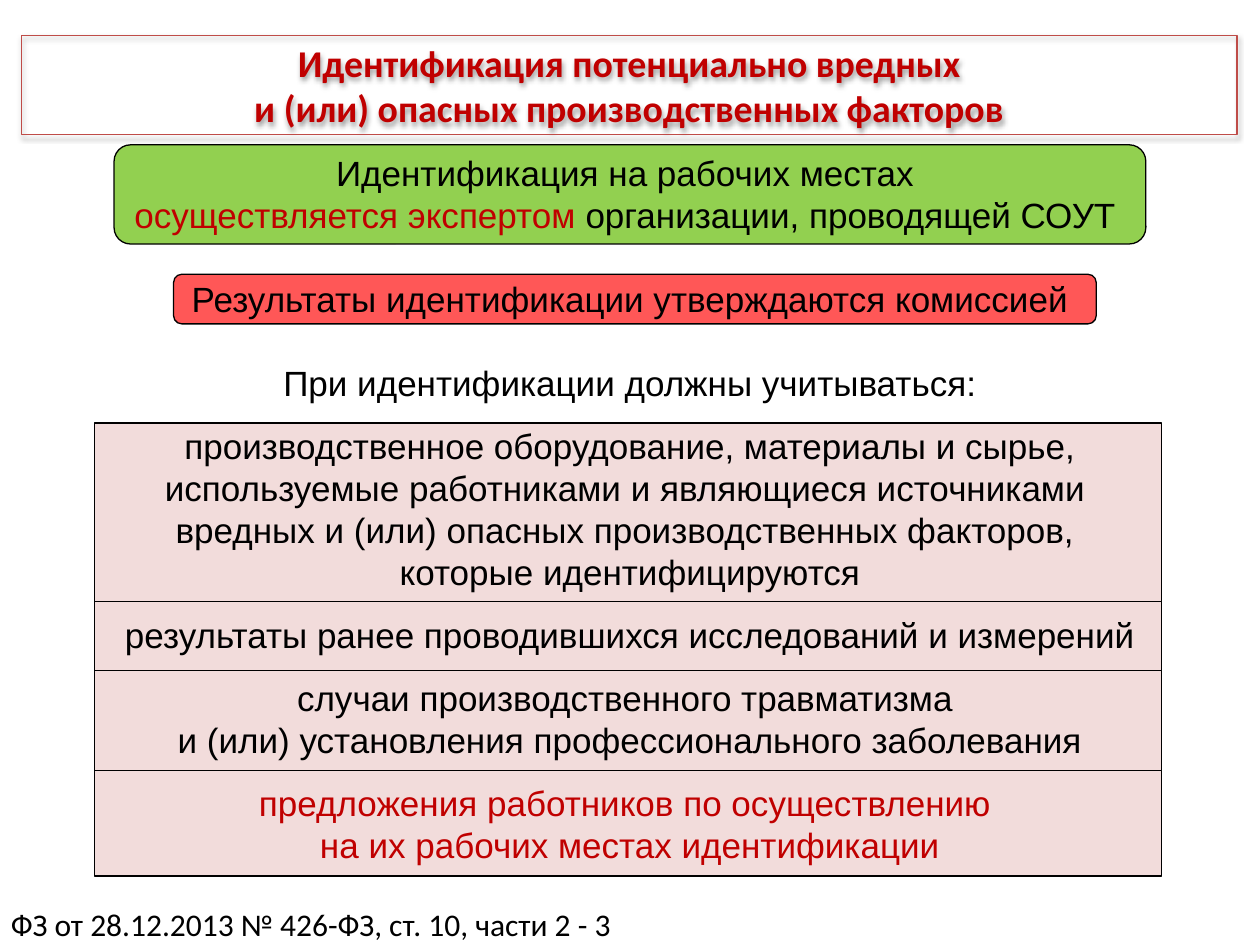
from lxml import etree
from pptx import Presentation, util as u
from pptx.dml.color import RGBColor
from pptx.enum import shapes, text
from pptx.oxml import ns

BLACK = RGBColor(0, 0, 0)
CRIMSON = RGBColor(0xC0, 0, 0)
BORDER = RGBColor(0xBF, 0x4C, 0x48)
GREEN = RGBColor(0x92, 0xD0, 0x50)
RED = RGBColor(0xFF, 0x57, 0x57)
PINK = RGBColor(0xF2, 0xDC, 0xDB)

CENTER = {"alignment": text.PP_ALIGN.CENTER}
LINE = {**CENTER, "line_spacing": u.Pt(24)}
SECTION = {**LINE, "space_before": u.Pt(24)}
ITEM = {**LINE, "space_after": u.Pt(12)}
TITLE_FONT = {"name": "Calibri", "size": u.Pt(21.6), "bold": True}
BODY_FONT = {"name": "Arial", "size": u.Pt(20)}
FOOTER_FONT = {"name": "Calibri", "size": u.Pt(18)}

TITLE = [([("Идентификация потенциально вредных\nи (или) опасных производственных факторов", CRIMSON)], CENTER)]
BODY = [
    ([("Идентификация на рабочих местах ", BLACK)], LINE),
    ([("осуществляется экспертом ", CRIMSON), ("организации, проводящей СОУТ ", BLACK)], LINE),
    ([("Результаты идентификации утверждаются комиссией", BLACK)], SECTION),
    ([("При идентификации должны учитываться:", BLACK)], {**SECTION, **ITEM}),
    ([("производственное оборудование, материалы и сырье, используемые работниками "
       "и являющиеся источниками \nвредных и (или) опасных производственных факторов, "
       "\nкоторые идентифицируются", BLACK)], ITEM),
    ([("результаты ранее проводившихся исследований и измерений", BLACK)], ITEM),
    ([("случаи производственного травматизма \nи (или) установления профессионального заболевания", BLACK)], ITEM),
    ([("предложения работников по осуществлению \nна их рабочих местах идентификации", CRIMSON)], ITEM),
]
FOOTER = [([("ФЗ от 28.12.2013 № 426-ФЗ, ст. 10, части 2 - 3", BLACK)], {})]
BAND_HEIGHTS = (3.6, 1.39, 2.01, 2.13)


def apply(target, values):
    """Set every attribute named in a dict of format values."""
    for name, value in values.items():
        setattr(target, name, value)


def write(frame, paragraphs, font):
    """Write paragraphs of coloured spans, with line breaks at newlines."""
    frame.word_wrap = True
    for index, (spans, layout) in enumerate(paragraphs):
        para = frame.add_paragraph() if index else frame.paragraphs[0]
        apply(para, layout)
        for words, color in spans:
            for row, piece in enumerate(words.split("\n")):
                if row:
                    para.add_line_break()
                span = para.add_run()
                span.text = piece
                apply(span.font, font)
                span.font.color.rgb = color


def add_panel(page, kind, area, fill=None, line=BLACK):
    """Add an outlined panel without a shadow."""
    panel = page.shapes.add_shape(kind, *map(u.Cm, area))
    panel.shadow.inherit = False
    if fill is None:
        panel.fill.background()
    else:
        panel.fill.solid()
        panel.fill.fore_color.rgb = fill
    panel.line.color.rgb = line
    panel.line.width = u.Pt(0.75)
    return panel


def add_shadow(panel):
    """Give a panel a soft shadow straight below it."""
    effects = panel._element.spPr.find(ns.qn("a:effectLst"))
    shadow = etree.SubElement(effects, ns.qn("a:outerShdw"), blurRad=str(u.Pt(3.1)),
                              dist=str(u.Pt(1.6)), dir="5400000", rotWithShape="0")
    color = etree.SubElement(shadow, ns.qn("a:srgbClr"), val="000000")
    etree.SubElement(color, ns.qn("a:alpha"), val="38000")


def add_text(page, area, paragraphs, font):
    """Add a wrapping text box."""
    box = page.shapes.add_textbox(*map(u.Cm, area))
    write(box.text_frame, paragraphs, font)


def add_title(page):
    """Add the framed title with its shadow."""
    panel = add_panel(page, shapes.MSO_SHAPE.RECTANGLE, (0.43, 0.71, 24.51, 2.01), line=BORDER)
    add_shadow(panel)
    panel.text_frame.vertical_anchor = text.MSO_ANCHOR.MIDDLE
    write(panel.text_frame, TITLE, TITLE_FONT)


def add_bands(page):
    """Stack the pink bands from top to bottom."""
    top = 8.53
    for height in BAND_HEIGHTS:
        add_panel(page, shapes.MSO_SHAPE.RECTANGLE, (1.9, top, 21.52, height), PINK)
        top += height


def main():
    """Build and save the slide."""
    deck = Presentation()
    deck.slide_width, deck.slide_height = u.Cm(25.4), u.Cm(19.05)
    page = deck.slides.add_slide(deck.slide_layouts[6])
    add_bands(page)
    add_panel(page, shapes.MSO_SHAPE.ROUNDED_RECTANGLE, (3.5, 5.53, 18.6, 1), RED)
    add_panel(page, shapes.MSO_SHAPE.ROUNDED_RECTANGLE, (2.3, 2.92, 20.8, 2), GREEN)
    add_title(page)
    add_text(page, (1.09, 2.92, 23.22, 14.66), BODY, BODY_FONT)
    add_text(page, (-0.03, 18.11, 16.79, 0.94), FOOTER, FOOTER_FONT)
    deck.save("out.pptx")


if __name__ == "__main__":
    main()
